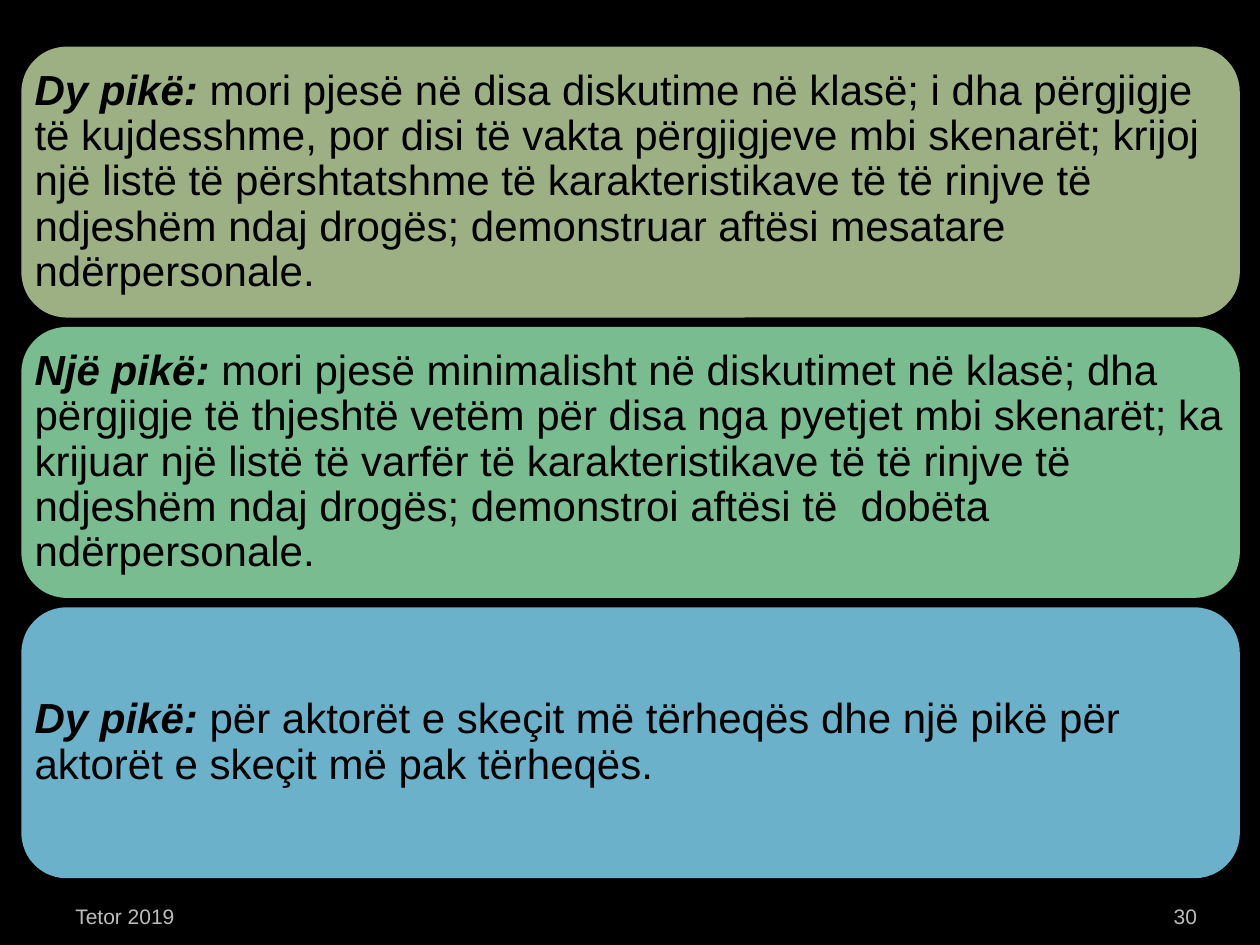
from pptx import Presentation
from pptx.dml.color import RGBColor
from pptx.enum.shapes import MSO_SHAPE
from pptx.enum.text import MSO_ANCHOR, PP_ALIGN
from pptx.util import Inches, Pt

CARDS = [
    ("9CB084", "Dy pikë:",
     " mori pjesë në disa diskutime në klasë; i dha përgjigje të kujdesshme, "
     "por disi të vakta përgjigjeve mbi skenarët; krijoj një listë të përshtatshme "
     "të karakteristikave të të rinjve të ndjeshëm ndaj drogës; demonstruar aftësi "
     "mesatare ndërpersonale."),
    ("78BC90", "Një pikë:",
     " mori pjesë minimalisht në diskutimet në klasë; dha përgjigje të thjeshtë "
     "vetëm për disa nga pyetjet mbi skenarët; ka krijuar një listë të varfër të "
     "karakteristikave të të rinjve të ndjeshëm ndaj drogës; demonstroi aftësi të  "
     "dobëta ndërpersonale."),
    ("6BB1C9", "Dy pikë:",
     " për aktorët e skeçit më tërheqës dhe një pikë për aktorët e skeçit më pak "
     "tërheqës."),
]
FOOTERS = [
    ("Tetor 2019", 0.5, 2.33, 0.1, PP_ALIGN.LEFT),
    ("30", 8.67, 0.83, 0, PP_ALIGN.RIGHT),
]
CARD_LEFT, CARD_TOP, CARD_WIDTH, CARD_HEIGHT = 0.17, 0.37, 9.67, 2.15
CARD_STEP = 2.225


def rgb(color):
    return RGBColor.from_string(color)


def add_run(p, text, size=24, color="000000", bold=False, italic=False):
    r = p.add_run()
    r.text = text
    r.font.name = "Arial"
    r.font.size = Pt(size)
    r.font.color.rgb = rgb(color)
    r.font.bold = bold
    r.font.italic = italic


def set_frame(sp, anchor, align, side, edge):
    tf = sp.text_frame
    tf.word_wrap = True
    tf.vertical_anchor = anchor
    tf.margin_left = tf.margin_right = Inches(side)
    tf.margin_top = tf.margin_bottom = Inches(edge)
    p = tf.paragraphs[0]
    p.alignment = align
    return p


def add_card(s, top, fill, label, body):
    sp = s.shapes.add_shape(MSO_SHAPE.ROUNDED_RECTANGLE, Inches(CARD_LEFT), Inches(top),
                            Inches(CARD_WIDTH), Inches(CARD_HEIGHT))
    sp.shadow.inherit = False
    sp.fill.solid()
    sp.fill.fore_color.rgb = rgb(fill)
    sp.line.fill.background()
    p = set_frame(sp, MSO_ANCHOR.MIDDLE, PP_ALIGN.LEFT, 0, 0)
    p.line_spacing = 0.9
    add_run(p, label, bold=True, italic=True)
    add_run(p, body)


def main():
    prs = Presentation()
    prs.slide_width, prs.slide_height = Inches(10), Inches(7.5)
    s = prs.slides.add_slide(prs.slide_layouts[6])
    s.background.fill.solid()
    s.background.fill.fore_color.rgb = rgb("000000")

    for text, left, width, side, align in FOOTERS:
        sp = s.shapes.add_textbox(Inches(left), Inches(7.02), Inches(width), Inches(0.4))
        p = set_frame(sp, MSO_ANCHOR.BOTTOM, align, side, 0.05)
        add_run(p, text, size=12, color="BDBDBD")

    for i, card in enumerate(CARDS):
        add_card(s, CARD_TOP + i * CARD_STEP, *card)

    prs.save("out.pptx")


if __name__ == "__main__":
    main()
